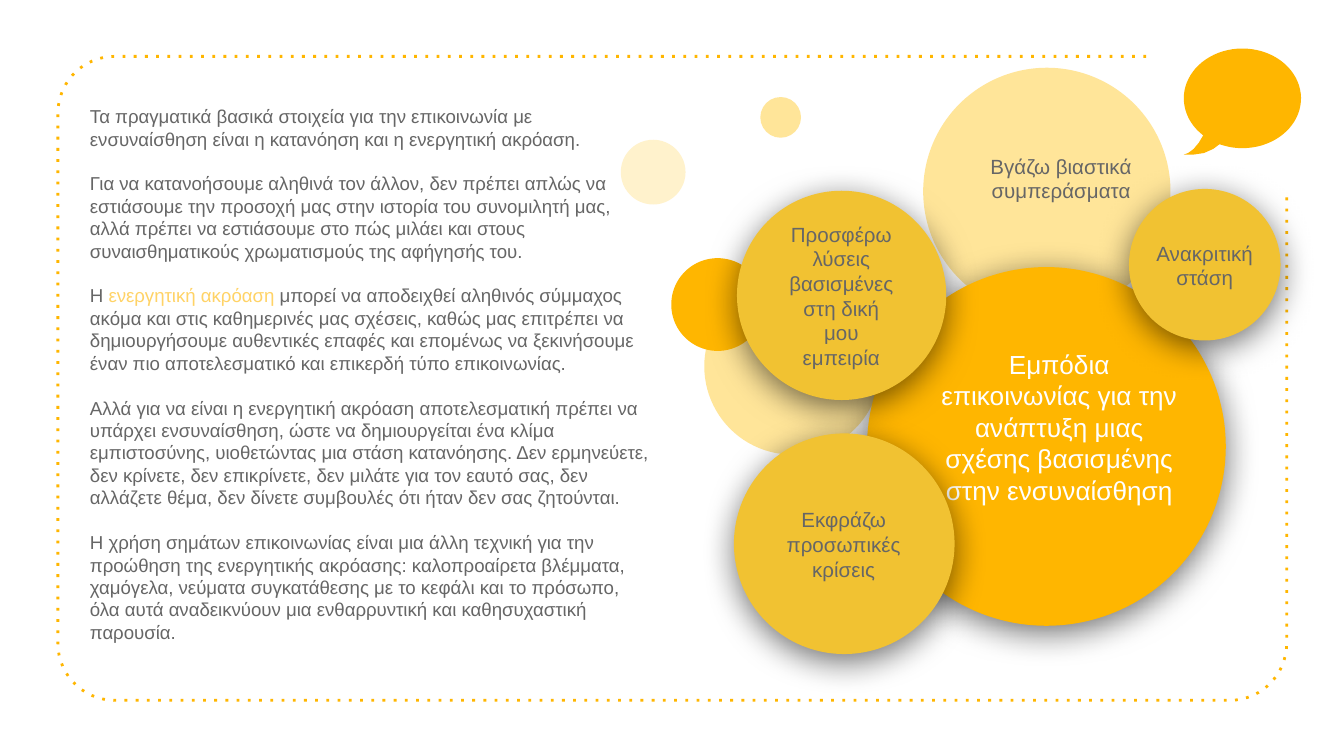
import math

import lxml.etree
import pptx
import pptx.dml.color
import pptx.enum.shapes
import pptx.enum.text
import pptx.oxml.ns
import pptx.util

Pt = pptx.util.Pt
qn = pptx.oxml.ns.qn
OVAL = pptx.enum.shapes.MSO_SHAPE.OVAL
ANCHOR = pptx.enum.text.MSO_ANCHOR
ALIGN = pptx.enum.text.PP_ALIGN

COLORS = {
    "amber": "FFB600",
    "gold": "F1C232",
    "sand": "FFE599",
    "cream": "FFF2CC",
    "accent": "FFD366",
    "grey": "666666",
    "white": "FFFFFF",
}


def color(name):
    return pptx.dml.color.RGBColor.from_string(COLORS[name])


def arc(center_x, center_y, radius_x, radius_y, start, end, steps):
    angles = [math.radians(start + (end - start) * i / steps) for i in range(steps + 1)]
    return [(Pt(center_x + radius_x * math.cos(a)), Pt(center_y + radius_y * math.sin(a)))
            for a in angles]


deck = pptx.Presentation()
deck.slide_width, deck.slide_height = Pt(720), Pt(405)
page = deck.slides.add_slide(deck.slide_layouts[1])
title = page.shapes.title
title._element.getparent().remove(title._element)

left, top, right, bottom, radius = 31, 30.2, 689.3, 375.2, 30.5
frame_points = [(Pt(614), Pt(top))]
frame_points += arc(left + radius, top + radius, radius, radius, 270, 180, 15)
frame_points += arc(left + radius, bottom - radius, radius, radius, 180, 90, 15)
frame_points += arc(right - radius, bottom - radius, radius, radius, 90, 0, 15)
frame_points.append((Pt(right), Pt(105)))
builder = page.shapes.build_freeform(*frame_points[0])
builder.add_line_segments(frame_points[1:], close=False)
frame = builder.convert_to_shape()
frame.shadow.inherit = False
frame.fill.background()
frame.line.color.rgb = color("amber")
frame.line.width = Pt(1.5)
outline = frame._element.spPr.find(qn("a:ln"))
lxml.etree.SubElement(outline, qn("a:prstDash"), val="dot")

discs = [
    (332.6, 74.9, 34.7, "cream", None),
    (377.3, 149, 94.6, "sand", None),
    (494.6, 36.3, 132.5, "sand", None),
    (359.6, 138.3, 49.7, "amber", None),
    (407.3, 52, 21.8, "sand", None),
    (464.5, 143.1, 192.2, "amber",
     ("Εμπόδια επικοινωνίας για την ανάπτυξη μιας σχέσης βασισμένης στην ενσυναίσθηση",
      494, 183, 147, 91.4, 14, "white")),
    (394.8, 102.2, 112.1, "gold",
     ("Προσφέρω λύσεις βασισμένες στη δική μου εμπειρία",
      412.6, 121.3, 76.3, 74, 11, "grey")),
    (393.2, 232.2, 118.2, "gold",
     ("Εκφράζω προσωπικές κρίσεις", 409.9, 254.5, 84.2, 74, 11, "grey")),
    (604.8, 101.2, 81.2, "gold",
     ("Ανακριτική στάση", 604.8, 115.2, 81.2, 54, 11, "grey")),
    (None, None, None, None,
     ("Βγάζω βιαστικά συμπεράσματα", 521.3, 78.7, 94.3, 33.5, 11, "grey")),
]
for x, y, size, fill, label in discs:
    if size:
        disc = page.shapes.add_shape(OVAL, Pt(x), Pt(y), Pt(size), Pt(size))
        disc.shadow.inherit = False
        disc.fill.solid()
        disc.fill.fore_color.rgb = color(fill)
        disc.line.fill.background()
    if not label:
        continue
    if size:
        effects = disc._element.spPr.find(qn("a:effectLst"))
        shadow = lxml.etree.SubElement(effects, qn("a:outerShdw"), blurRad=str(Pt(18)),
                                       dist=str(Pt(4)), dir="5400000", algn="bl",
                                       rotWithShape="0")
        black = lxml.etree.SubElement(shadow, qn("a:srgbClr"), val="000000")
        lxml.etree.SubElement(black, qn("a:alpha"), val="54000")
    wording, x, y, width, height, font_size, ink = label
    box = page.shapes.add_textbox(Pt(x), Pt(y), Pt(width), Pt(height))
    frame_text = box.text_frame
    frame_text.word_wrap = True
    frame_text.vertical_anchor = ANCHOR.MIDDLE
    frame_text.margin_left = frame_text.margin_right = Pt(7.2)
    frame_text.text = wording
    para = frame_text.paragraphs[0]
    para.alignment = ALIGN.CENTER
    span = para.runs[0]
    span.font.name = "Arial"
    span.font.size = Pt(font_size)
    span.font.color.rgb = color(ink)

bubble_points = arc(665.6, 52.7, 31.4, 26.7, 113, 492, 80)
bubble_points += [(Pt(x), Pt(y)) for x, y in
                  [(642.2, 76.5), (639.5, 79.8), (636.5, 82), (634.3, 82.8),
                   (639, 82.9), (645, 82), (650, 79.8)]]
builder = page.shapes.build_freeform(*bubble_points[0])
builder.add_line_segments(bubble_points[1:], close=True)
bubble = builder.convert_to_shape()
bubble.shadow.inherit = False
bubble.fill.solid()
bubble.fill.fore_color.rgb = color("amber")
bubble.line.fill.background()

passages = [
    ["Τα πραγματικά βασικά στοιχεία για την επικοινωνία με ενσυναίσθηση είναι η "
     "κατανόηση και η ενεργητική ακρόαση."],
    ["Για να κατανοήσουμε αληθινά τον άλλον, δεν πρέπει απλώς να εστιάσουμε την "
     "προσοχή μας στην ιστορία του συνομιλητή μας, αλλά πρέπει να εστιάσουμε στο πώς "
     "μιλάει και στους συναισθηματικούς χρωματισμούς της αφήγησής του."],
    ["Η ", "ενεργητική ακρόαση ",
     "μπορεί να αποδειχθεί αληθινός σύμμαχος ακόμα και στις καθημερινές μας σχέσεις, "
     "καθώς μας επιτρέπει να δημιουργήσουμε αυθεντικές επαφές και επομένως να "
     "ξεκινήσουμε έναν πιο αποτελεσματικό και επικερδή τύπο επικοινωνίας."],
    ["Αλλά για να είναι η ενεργητική ακρόαση αποτελεσματική πρέπει να υπάρχει "
     "ενσυναίσθηση, ώστε να δημιουργείται ένα κλίμα εμπιστοσύνης, υιοθετώντας μια "
     "στάση κατανόησης. Δεν ερμηνεύετε, δεν κρίνετε, δεν επικρίνετε, δεν μιλάτε για "
     "τον εαυτό σας, δεν αλλάζετε θέμα, δεν δίνετε συμβουλές ότι ήταν δεν σας ζητούνται."],
    ["Η χρήση σημάτων επικοινωνίας είναι μια άλλη τεχνική για την προώθηση της "
     "ενεργητικής ακρόασης: καλοπροαίρετα βλέμματα, χαμόγελα, νεύματα συγκατάθεσης με "
     "το κεφάλι και το πρόσωπο, όλα αυτά αναδεικνύουν μια ενθαρρυντική και "
     "καθησυχαστική παρουσία."],
]
body = page.placeholders[1]
body.left, body.top, body.width, body.height = Pt(41), Pt(49), Pt(315.4), Pt(319)
story = body.text_frame
story.auto_size = pptx.enum.text.MSO_AUTO_SIZE.NONE
story.word_wrap = True
story.vertical_anchor = ANCHOR.TOP
story.margin_left = story.margin_right = story.margin_top = story.margin_bottom = Pt(7.2)
for index, parts in enumerate(passages):
    para = story.add_paragraph() if index else story.paragraphs[0]
    para.space_before = Pt(12 if index else 0)
    settings = para._element.get_or_add_pPr()
    settings.set("marL", "0")
    settings.set("indent", "0")
    lxml.etree.SubElement(settings, qn("a:buNone"))
    for part_index, part in enumerate(parts):
        span = para.add_run()
        span.text = part
        span.font.name = "Arial"
        span.font.size = Pt(10)
        span.font.color.rgb = color("accent" if part_index == 1 else "grey")

deck.save("out.pptx")
